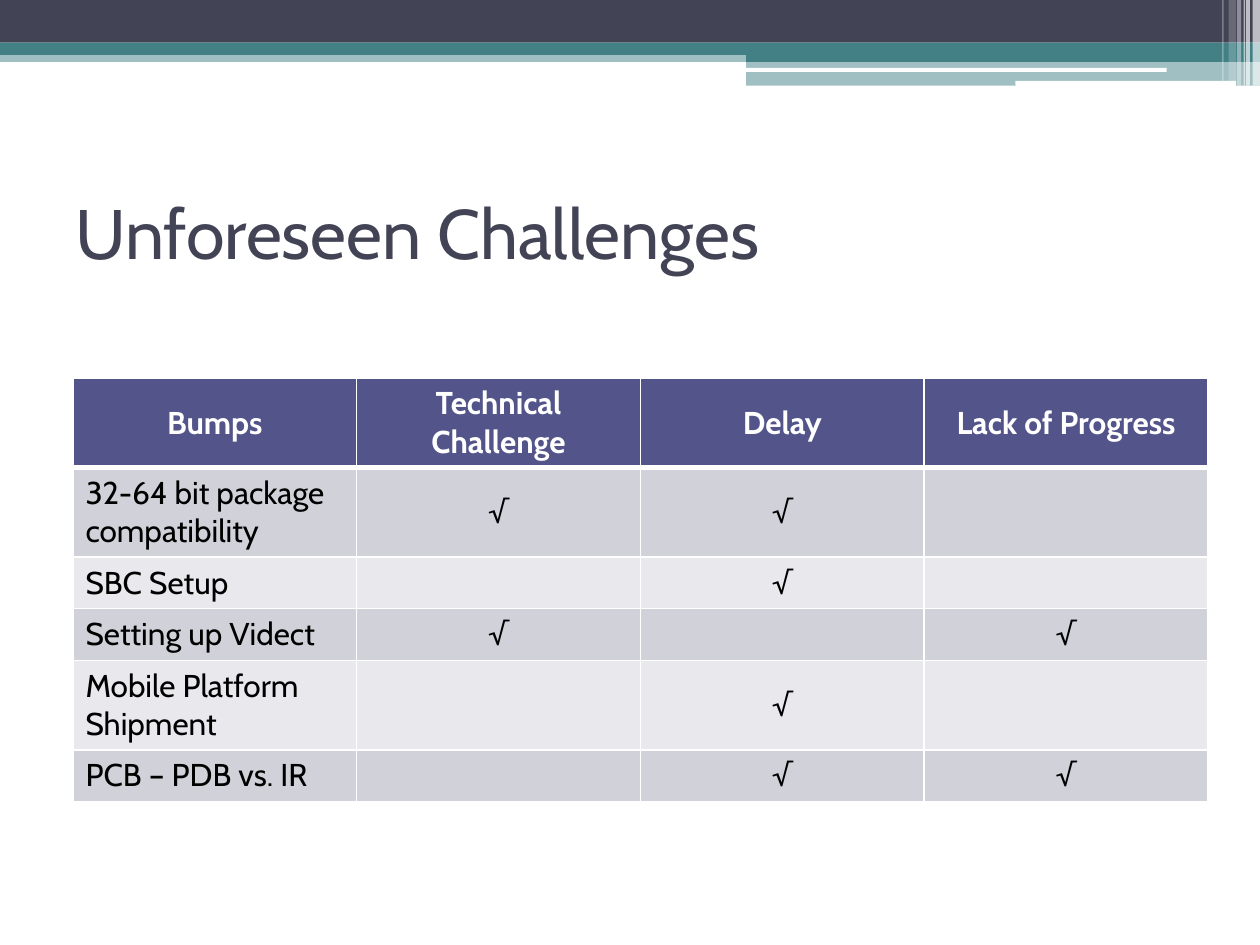
from lxml import etree
from pptx import Presentation
from pptx.dml.color import RGBColor
from pptx.enum.shapes import MSO_SHAPE
from pptx.enum.text import MSO_ANCHOR, MSO_AUTO_SIZE, PP_ALIGN
from pptx.oxml.ns import qn
from pptx.util import Cm, Pt

RECT, PILL = MSO_SHAPE.RECTANGLE, MSO_SHAPE.ROUNDED_RECTANGLE
LEFT, CENTER = PP_ALIGN.LEFT, PP_ALIGN.CENTER
MIDDLE = MSO_ANCHOR.MIDDLE
TITLE_ONLY = 5

SLIDE_WIDTH, SLIDE_HEIGHT = 25.4, 19.05
PANEL_LEFT = 15.04
PANEL_WIDTH = SLIDE_WIDTH - PANEL_LEFT
CHECK = "√"

HEADINGS = ["Bumps", "Technical Challenge", "Delay", "Lack of Progress"]
# Each challenge: name, row height, and its marks under the last three headings
CHALLENGES = [
    ("32-64 bit package compatibility", 1.78, (True, True, False)),
    ("SBC Setup", 1.04, (False, True, False)),
    ("Setting up Videct", 1.04, (True, False, True)),
    ("Mobile Platform Shipment", 1.78, (False, True, False)),
    ("PCB – PDB vs. IR", 1.04, (False, True, True)),
]
# Each stripe: left, width, height, opacity in percent
STRIPES = [
    (25.25, 0.15, 1.73, 65),
    (25.12, 0.08, 1.73, 65),
    (25.07, 0.03, 1.73, 60),
    (24.94, 0.08, 1.73, 40),
    (24.77, 0.15, 1.63, 20),
    (24.64, 0.03, 1.63, 30),
]


def color(hex_string):
    return RGBColor.from_string(hex_string)


def write(frame, text, size=18, font="Cabin", ink="000000", bold=False, align=LEFT):
    paragraph = frame.paragraphs[0]
    paragraph.alignment = align
    run = paragraph.add_run()
    run.text = text
    run.font.size = Pt(size)
    run.font.name = font
    run.font.bold = bold
    run.font.color.rgb = color(ink)


def border(cell, ink, bottom=1):
    """Draw a 1 pt line round the cell, with its own width at the bottom."""
    properties = cell._tc.get_or_add_tcPr()
    sides = {"a:lnL": 1, "a:lnR": 1, "a:lnT": 1, "a:lnB": bottom}
    for position, (tag, width) in enumerate(sides.items()):
        line = etree.Element(qn(tag), w=str(Pt(width)))
        fill = etree.SubElement(line, qn("a:solidFill"))
        etree.SubElement(fill, qn("a:srgbClr"), val=ink)
        properties.insert(position, line)


class Deck:
    dark, teal, white = "424456", "438086", "FFFFFF"
    header, bands = "53548A", ("D1D1DA", "E9E9ED")

    def __init__(self):
        self.presentation = Presentation()
        self.presentation.slide_width = Cm(SLIDE_WIDTH)
        self.presentation.slide_height = Cm(SLIDE_HEIGHT)
        layout = self.presentation.slide_layouts[TITLE_ONLY]
        self.slide = self.presentation.slides.add_slide(layout)

    def block(self, left, top, width, height, fill, opacity=100, preset=RECT):
        shape = self.slide.shapes.add_shape(
            preset, Cm(left), Cm(top), Cm(width), Cm(height))
        shape.shadow.inherit = False
        shape.line.fill.background()
        shape.fill.solid()
        shape.fill.fore_color.rgb = color(fill)
        if opacity < 100:
            fill_color = shape.element.spPr.find(".//" + qn("a:srgbClr"))
            etree.SubElement(fill_color, qn("a:alpha"), val=str(opacity * 1000))

    def title(self, text, left, top, width, height):
        title = self.slide.shapes.title
        title.left, title.top = Cm(left), Cm(top)
        title.width, title.height = Cm(width), Cm(height)
        title.text_frame.auto_size = MSO_AUTO_SIZE.NONE
        title.text_frame.vertical_anchor = MIDDLE
        write(title.text_frame, text, size=40, ink=self.dark)

    def cell(self, cell, fill, text="", bottom=1, **text_format):
        cell.fill.solid()
        cell.fill.fore_color.rgb = color(fill)
        cell.vertical_anchor = MIDDLE
        border(cell, self.white, bottom)
        if text:
            write(cell.text_frame, text, **text_format)

    def challenge_table(self, left, top, column_width, header_height):
        heights = [header_height] + [height for _, height, _ in CHALLENGES]
        table = self.slide.shapes.add_table(
            len(heights), len(HEADINGS), Cm(left), Cm(top),
            Cm(column_width * len(HEADINGS)), Cm(sum(heights))).table
        for column in table.columns:
            column.width = Cm(column_width)
        for row, height in zip(table.rows, heights):
            row.height = Cm(height)

        for column, heading in enumerate(HEADINGS):
            self.cell(table.cell(0, column), self.header, heading, bottom=3,
                      ink=self.white, bold=True, align=CENTER)
        for row, (challenge, _, marks) in enumerate(CHALLENGES, start=1):
            band = self.bands[(row - 1) % 2]
            self.cell(table.cell(row, 0), band, challenge)
            for column, marked in enumerate(marks, start=1):
                self.cell(table.cell(row, column), band, CHECK if marked else "",
                          font="Cambria", align=CENTER)


def main():
    deck = Deck()
    deck.block(0, 1.02, SLIDE_WIDTH, 0.23, deck.teal, opacity=50)
    deck.block(0, 0, SLIDE_WIDTH, 0.86, deck.dark)
    deck.block(0, 0.86, SLIDE_WIDTH, 0.25, deck.teal)
    deck.block(PANEL_LEFT, 1, PANEL_WIDTH, 0.25, deck.teal)
    deck.block(PANEL_LEFT, 1.23, PANEL_WIDTH, 0.5, deck.teal, opacity=50)
    deck.block(15.01, 1.37, 8.51, 0.08, deck.white, preset=PILL)
    deck.block(20.47, 1.63, 4.45, 0.1, deck.white, preset=PILL)
    for left, width, height, opacity in STRIPES:
        deck.block(left, 0, width, height, deck.white, opacity)

    deck.title("Unforeseen Challenges", 1.27, 3.18, 22.86, 2.97)
    deck.challenge_table(1.47, 7.62, column_width=5.72, header_height=1.78)
    deck.presentation.save("out.pptx")


if __name__ == "__main__":
    main()
